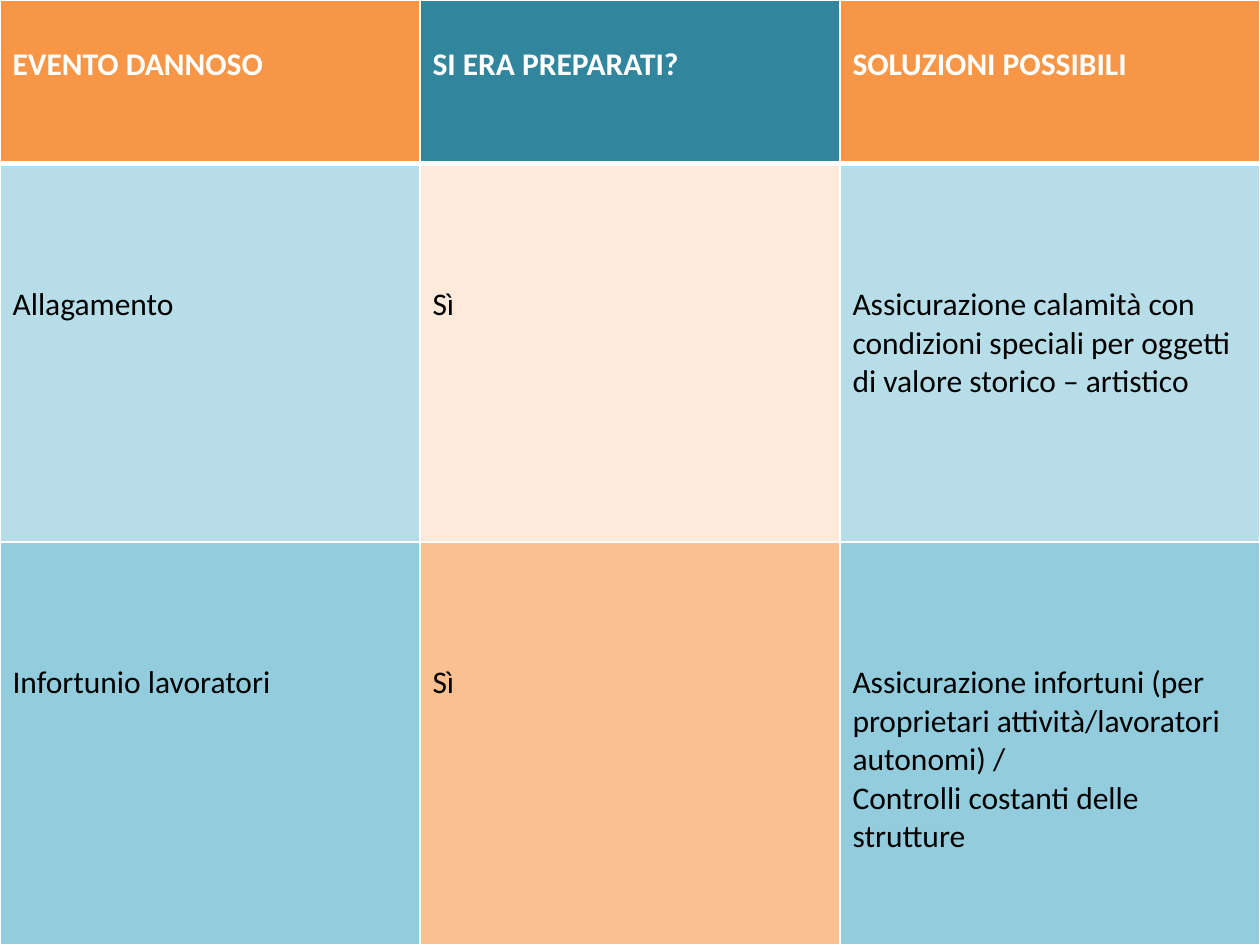
from lxml.etree import SubElement
from pptx import Presentation
from pptx.dml.color import RGBColor
from pptx.oxml.ns import qn
from pptx.util import Inches, Pt

WHITE = RGBColor(0xFF, 0xFF, 0xFF)
BLACK = RGBColor(0x00, 0x00, 0x00)
ORANGE = RGBColor(0xF7, 0x96, 0x46)
TEAL = RGBColor(0x31, 0x85, 0x9C)
PALE_BLUE = RGBColor(0xB7, 0xDE, 0xE8)
PALE_PEACH = RGBColor(0xFD, 0xEA, 0xDA)
LIGHT_BLUE = RGBColor(0x93, 0xCD, 0xDD)
PEACH = RGBColor(0xFA, 0xC0, 0x90)

SLIDE_WIDTH, SLIDE_HEIGHT = Inches(10), Inches(7.5)
HEADER_FONT = {"name": "Calibri", "size": Pt(18), "bold": True}
BODY_FONT = {**HEADER_FONT, "bold": False}
THIN, THICK = Pt(1), Pt(3)

# Each row: share of the height, space above the text, font, text colour,
# fills of the outer and middle columns, top and bottom border, cell texts.
ROWS = [
    (1.3 / 7.5, Inches(0.36), HEADER_FONT, WHITE, (ORANGE, TEAL), (THIN, THICK),
     ["EVENTO DANNOSO", "SI ERA PREPARATI?", "SOLUZIONI POSSIBILI"]),
    (3 / 7.5, Inches(0.97), BODY_FONT, BLACK, (PALE_BLUE, PALE_PEACH), (THICK, THIN),
     ["Allagamento", "Sì",
      "Assicurazione calamità con condizioni speciali per oggetti "
      "di valore storico – artistico"]),
    (3.2 / 7.5, Inches(0.97), BODY_FONT, BLACK, (LIGHT_BLUE, PEACH), (THIN, THIN),
     ["Infortunio lavoratori", "Sì",
      "Assicurazione infortuni (per proprietari attività/lavoratori autonomi) /\n"
      "Controlli costanti delle strutture"]),
]


def set_borders(cell, top, bottom):
    properties = cell._tc.get_or_add_tcPr()
    sides = {"a:lnL": THIN, "a:lnR": THIN, "a:lnT": top, "a:lnB": bottom}
    for position, (side, width) in enumerate(sides.items()):
        line = SubElement(properties, qn(side), w=str(width))
        fill = SubElement(line, qn("a:solidFill"))
        SubElement(fill, qn("a:srgbClr"), val=str(WHITE))
        properties.insert(position, line)  # borders come before the fill


def write_cell(cell, text, font_format, colour):
    cell.text = text
    for paragraph in cell.text_frame.paragraphs:
        for run in paragraph.runs:
            for attribute, value in font_format.items():
                setattr(run.font, attribute, value)
            run.font.color.rgb = colour


def add_damage_table(slide, left, top, width, height):
    column_count = len(ROWS[0][-1])
    table = slide.shapes.add_table(
        len(ROWS), column_count, left, top, width, height).table
    for column in table.columns:
        column.width = width // column_count
    for row, (share, space_above, font_format, colour, fills, borders, texts) in zip(
            table.rows, ROWS):
        row.height = round(height * share)
        for index, (cell, text) in enumerate(zip(row.cells, texts)):
            cell.margin_top = space_above
            cell.fill.solid()
            cell.fill.fore_color.rgb = fills[index % 2]
            set_borders(cell, *borders)
            write_cell(cell, text, font_format, colour)


def main():
    presentation = Presentation()
    presentation.slide_width = SLIDE_WIDTH
    presentation.slide_height = SLIDE_HEIGHT
    slide = presentation.slides.add_slide(presentation.slide_layouts[6])
    add_damage_table(slide, 0, 0, SLIDE_WIDTH, SLIDE_HEIGHT)
    presentation.save("out.pptx")


if __name__ == "__main__":
    main()
